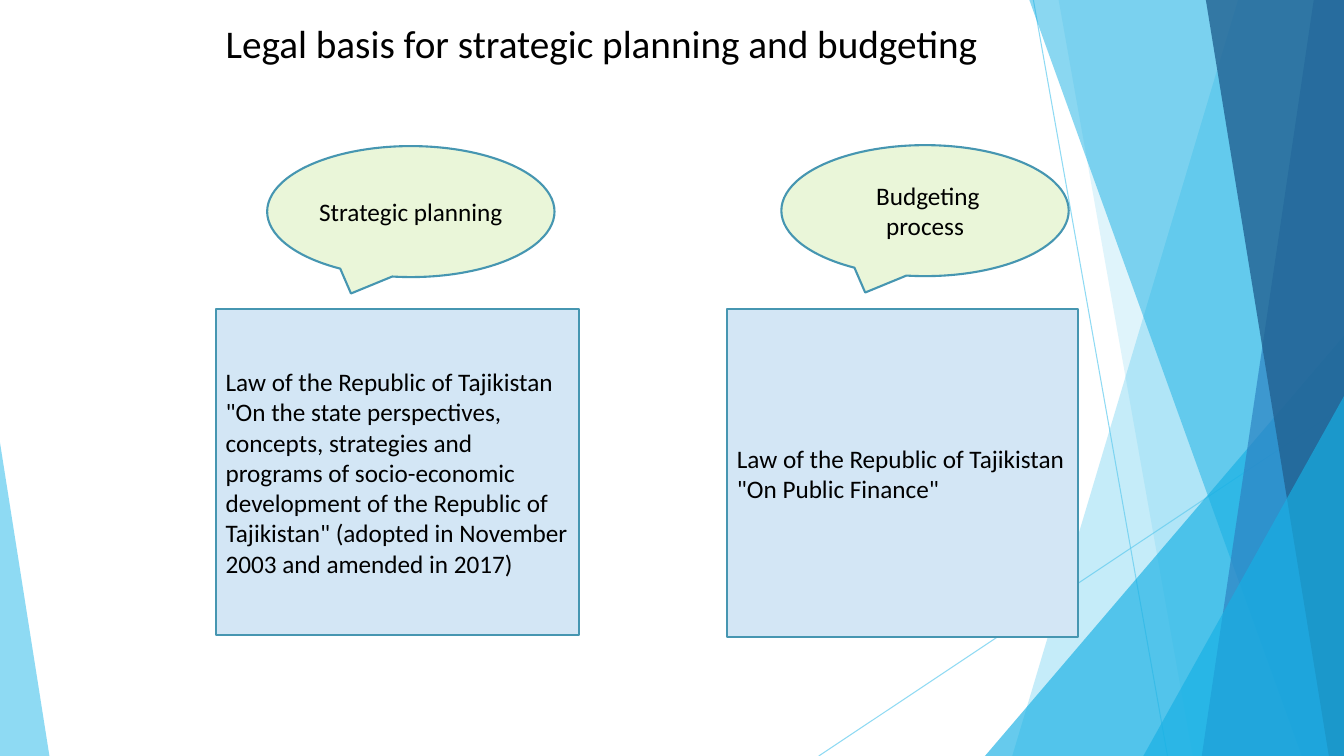
import pptx
import pptx.util
import pptx.dml.color
import pptx.enum.shapes
import pptx.enum.text
import pptx.oxml.ns
import lxml.etree

RGB = pptx.dml.color.RGBColor
KIND = pptx.enum.shapes.MSO_SHAPE
ALIGN = pptx.enum.text.PP_ALIGN
ANCHOR = pptx.enum.text.MSO_ANCHOR

SKY = RGB(0x5F, 0xCB, 0xEF)
CYAN = RGB(0x17, 0xB0, 0xE4)
BLUE = RGB(0x2E, 0x83, 0xC3)
NAVY = RGB(0x22, 0x62, 0x92)
PALE = RGB(0xD3, 0xE6, 0xF5)
LIME = RGB(0xEA, 0xF6, 0xD9)
TEAL = RGB(0x46, 0x96, 0xB1)
BLACK = RGB(0, 0, 0)

# Content; lengths are in a grid of 100 columns by 100 rows
TITLE = "Legal basis for strategic planning and budgeting"
TITLE_BOX = (4.5, 1.87, 80.5, 9.47)
LAWS = [
    ('Law of the Republic of Tajikistan "On the state perspectives, concepts, '
     'strategies and programs of socio-economic development of the Republic of '
     'Tajikistan" (adopted in November 2003 and amended in 2017)',
     (16.05, 40.93, 27.01, 43.07)),
    ('Law of the Republic of Tajikistan "On Public Finance"',
     (54.09, 40.93, 26.11, 43.33)),
]
TOPICS = [
    ("Strategic planning", (19.88, 19.33, 21.38, 17.33)),
    (" Budgeting process", (58.14, 19.2, 21.38, 17.33)),
]
RAYS = [(76.89, 0, 86.87, 100), (100, 53.73, 60.92, 100)]
# Band: top and foot of its left edge. Wedge: box and place of its tip.
DECOR = [
    ("band", (92.12, 75.32), SKY, 36),
    ("band", (78.77, 88.75), SKY, 20),
    ("wedge", (73.29, 44.4, 26.71, 55.6, 1), CYAN, 66),
    ("band", (76.59, 96.85), CYAN, 50),
    ("band", (97.75, 89.42), BLUE, 70),
    ("band", (89.72, 98.87), NAVY, 80),
    ("wedge", (85.07, 52.4, 14.93, 47.6, 1), CYAN, 66),
    ("wedge", (0, 58.53, 3.68, 41.47, 0), SKY, 70),
]

deck = pptx.Presentation()
deck.slide_width = pptx.util.Inches(13.33)
deck.slide_height = pptx.util.Inches(7.5)
slide = deck.slides.add_slide(deck.slide_layouts[5])
shapes = slide.shapes


def grid(*spans):
    """Turn column, row, column, row... into slide lengths."""
    sides = (deck.slide_width, deck.slide_height)
    return [round(span * sides[i % 2] / 100) for i, span in enumerate(spans)]


def fade(part, share):
    """Set the opacity of the colour within a part, in percent."""
    color = next(part.iter(pptx.oxml.ns.qn("a:srgbClr")))
    alpha = lxml.etree.SubElement(color, pptx.oxml.ns.qn("a:alpha"))
    alpha.set("val", str(share * 1000))


def write(shape, text, size=18, align=ALIGN.LEFT, anchor=ANCHOR.MIDDLE):
    frame = shape.text_frame
    frame.word_wrap = True
    frame.auto_size = pptx.enum.text.MSO_AUTO_SIZE.NONE
    frame.vertical_anchor = anchor
    para = frame.paragraphs[0]
    para.alignment = align
    run = para.add_run()
    run.text = text
    run.font.size = pptx.util.Pt(size)
    run.font.name = "Calibri"
    run.font.color.rgb = BLACK


def paint(shape, fill, line=None):
    shape.shadow.inherit = False
    shape.fill.solid()
    shape.fill.fore_color.rgb = fill
    if line is None:
        shape.line.fill.background()
    else:
        shape.line.color.rgb = line
        shape.line.width = pptx.util.Pt(1.5)


# Thin rays
for ends in RAYS:
    ray = shapes.add_connector(pptx.enum.shapes.MSO_CONNECTOR.STRAIGHT, *grid(*ends))
    ray.line.color.rgb = SKY
    ray.line.width = pptx.util.Pt(0.75)
    fade(ray.line._ln, 70)
    lxml.etree.SubElement(ray._element.spPr, pptx.oxml.ns.qn("a:effectLst"))

# Translucent bands and wedges
for kind, place, color, share in DECOR:
    if kind == "band":
        top, foot = place
        pen = shapes.build_freeform(*grid(top, 0))
        pen.add_line_segments([grid(100, 0), grid(100, 100), grid(foot, 100)])
        part = pen.convert_to_shape()
    else:
        part = shapes.add_shape(KIND.ISOSCELES_TRIANGLE, *grid(*place[:4]))
        part.adjustments[0] = place[4]
    paint(part, color)
    fade(part._element.spPr, share)

# Title, in front of the decoration
title = shapes.title
title.left, title.top, title.width, title.height = grid(*TITLE_BOX)
write(title, TITLE, size=28, align=ALIGN.CENTER, anchor=ANCHOR.TOP)
shapes._spTree.append(title._element)

# Laws and the topics above them
for items, kind, fill, align in (
    (LAWS, KIND.RECTANGLE, PALE, ALIGN.LEFT),
    (TOPICS, KIND.OVAL_CALLOUT, LIME, ALIGN.CENTER),
):
    for text, box in items:
        shape = shapes.add_shape(kind, *grid(*box))
        paint(shape, fill, TEAL)
        write(shape, text, align=align)

deck.save("out.pptx")
